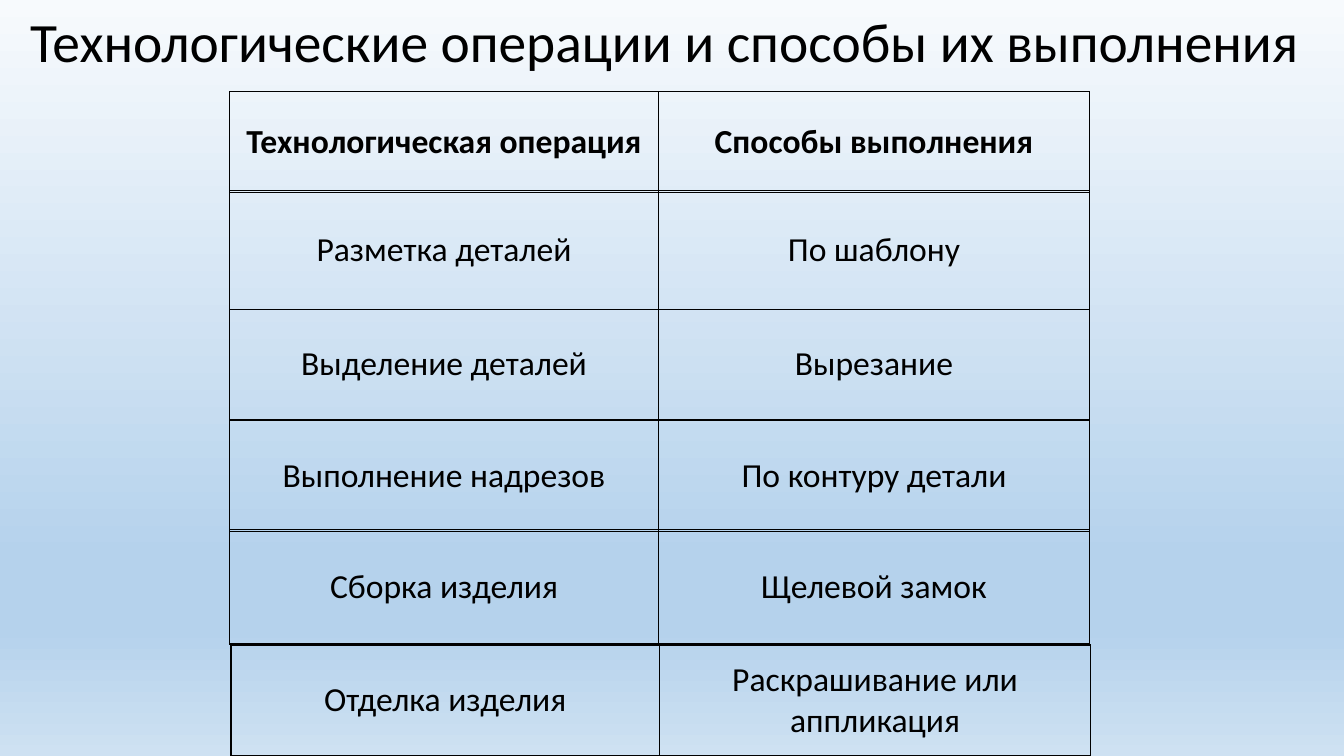
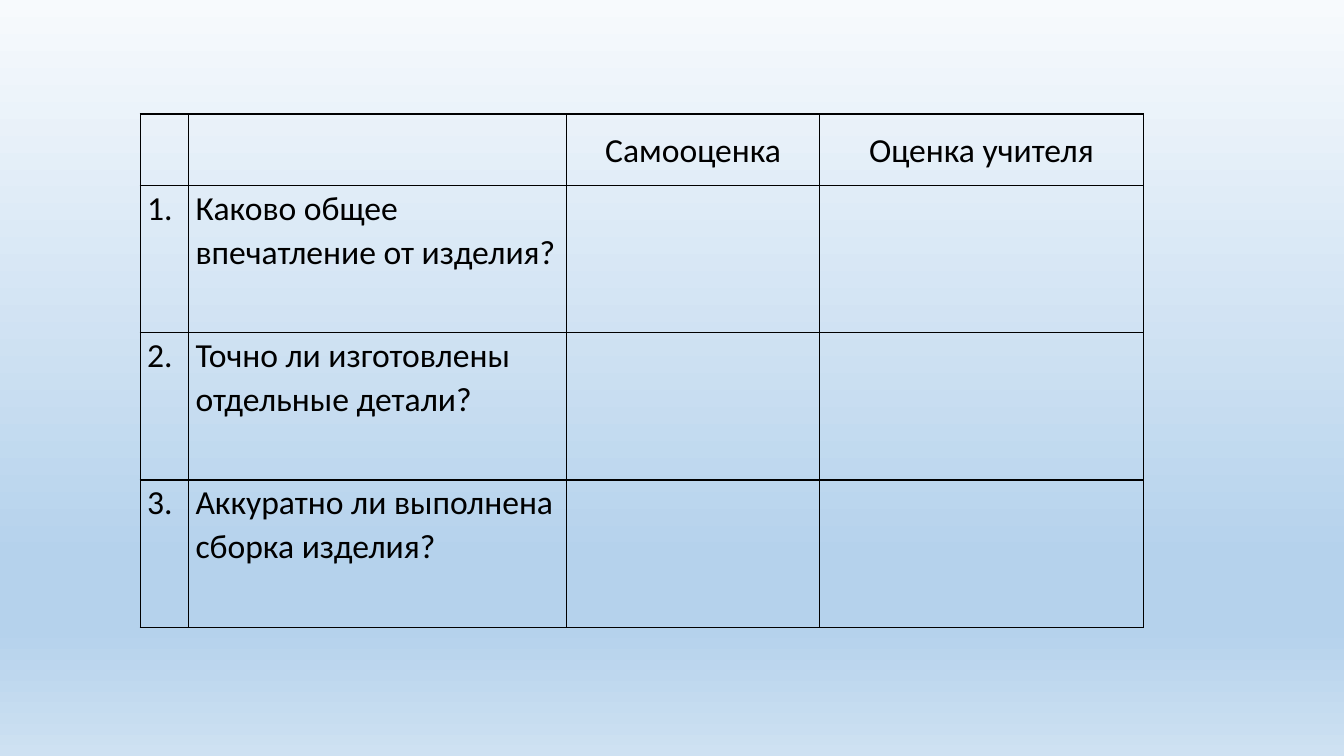
from copy import deepcopy
from dataclasses import dataclass

from lxml.etree import SubElement
from pptx import Presentation
from pptx.dml.color import RGBColor
from pptx.enum.text import MSO_ANCHOR, MSO_AUTO_SIZE, PP_ALIGN
from pptx.oxml.ns import qn
from pptx.util import Inches, Pt


@dataclass(frozen=True)
class Theme:
    font: str = "Calibri"
    ink: str = "000000"
    title_size: float = 39.6
    table_size: float = 24
    border_width: float = 1
    sky: tuple = ((0, "F7FAFD"), (0.74, "B5D2EC"), (0.83, "B5D2EC"), (1, "CEE1F2"))


class LessonDeck:
    TITLE_ONLY = 5
    BLANK = 6

    def __init__(self, theme):
        self.theme = theme
        self.deck = Presentation()
        self.deck.slide_width = Inches(13.33)
        self.deck.slide_height = Inches(7.5)
        self.page = None
        self.paint_master()

    def across(self, percent):
        return round(self.deck.slide_width * percent / 100)

    def down(self, percent):
        return round(self.deck.slide_height * percent / 100)

    def paint_master(self):
        master = self.deck.slide_master
        fill = master.background.fill
        fill.gradient()
        fill.gradient_angle = 270
        stop_list = master.element.find(".//" + qn("a:gsLst"))
        while len(stop_list) < len(self.theme.sky):
            stop_list.append(deepcopy(stop_list[0]))
        for stop, (position, color) in zip(fill.gradient_stops, self.theme.sky):
            stop.position = position
            stop.color.rgb = RGBColor.from_string(color)

    def add_page(self, layout):
        self.page = self.deck.slides.add_slide(self.deck.slide_layouts[layout])

    def style(self, para, size, align, spacing=None, bold=False):
        para.alignment = align
        para.line_spacing = spacing
        para.font.name = self.theme.font
        para.font.size = Pt(size)
        para.font.bold = bold
        para.font.color.rgb = RGBColor.from_string(self.theme.ink)

    def title(self, text, left, top, width, height):
        box = self.page.shapes.title
        box.left, box.top = self.across(left), self.down(top)
        box.width, box.height = self.across(width), self.down(height)
        frame = box.text_frame
        frame.text = text
        frame.word_wrap = True
        frame.auto_size = MSO_AUTO_SIZE.NONE
        frame.vertical_anchor = MSO_ANCHOR.MIDDLE
        self.style(frame.paragraphs[0], self.theme.title_size, PP_ALIGN.LEFT, 0.9)

    def outline(self, cell):
        properties = cell._tc.get_or_add_tcPr()
        for side in ("lnL", "lnR", "lnT", "lnB"):
            line = SubElement(properties, qn(f"a:{side}"), w=str(Pt(self.theme.border_width)))
            SubElement(SubElement(line, qn("a:solidFill")), qn("a:srgbClr"), val=self.theme.ink)
        cell.fill.background()

    def table(self, left, top, columns, rows, texts):
        frame = self.page.shapes.add_table(
            len(rows), len(columns), self.across(left), self.down(top),
            self.across(sum(columns)), self.down(sum(rows)))
        table = frame.table
        table.first_row = table.horz_banding = False
        for column, width in zip(table.columns, columns):
            column.width = self.across(width)
        for row, height, row_texts in zip(table.rows, rows, texts):
            row.height = self.down(height)
            for cell, text in zip(row.cells, row_texts):
                self.outline(cell)
                cell.text = text
        return table

    def format_cell(self, cell, centered=True, tight=False, bold=False):
        if tight:
            cell.margin_left = cell.margin_right = Inches(0.07)
            cell.margin_top = cell.margin_bottom = 0
        cell.vertical_anchor = MSO_ANCHOR.MIDDLE if centered else MSO_ANCHOR.TOP
        self.style(cell.text_frame.paragraphs[0], self.theme.table_size,
                   PP_ALIGN.CENTER if centered else PP_ALIGN.LEFT,
                   1.07 if tight else None, bold)


def build_operations(lesson):
    lesson.add_page(LessonDeck.TITLE_ONLY)
    lesson.title("Технологические операции и способы их выполнения", 1.5, 0, 97.5, 11.73)
    operations = (
        (17.1, 12.13, 13.33, "Технологическая операция", "Способы выполнения"),
        (17.1, 25.2, 15.73, "Разметка деталей", "По шаблону"),
        (17.1, 40.93, 14.53, "Выделение деталей", "Вырезание"),
        (17.1, 55.6, 14.67, "Выполнение надрезов", "По контуру детали"),
        (17.1, 70, 15.2, "Сборка изделия", "Щелевой замок"),
        (17.18, 85.33, 14.67, "Отделка изделия", "Раскрашивание или аппликация"),
    )
    for index, (left, top, height, *texts) in enumerate(operations):
        strip = lesson.table(left, top, (31.88, 32.11), (height,), (texts,))
        for cell in strip.iter_cells():
            lesson.format_cell(cell, bold=index == 0)


def build_assessment(lesson):
    lesson.add_page(LessonDeck.BLANK)
    questions = (
        "Каково общее впечатление от изделия?",
        "Точно ли изготовлены отдельные детали?",
        "Аккуратно ли выполнена сборка изделия?",
    )
    texts = [("", "", "Самооценка", "Оценка учителя")]
    texts += [(f"{number}.", question, "", "") for number, question in enumerate(questions, 1)]
    rows = (9.47,) + (19.47,) * len(questions)
    grid = lesson.table(10.43, 15.07, (3.6, 28.13, 18.83, 24.08), rows, texts)
    for index, row in enumerate(grid.rows):
        for cell in row.cells:
            lesson.format_cell(cell, centered=index == 0, tight=True)


def main():
    lesson = LessonDeck(Theme())
    build_operations(lesson)
    build_assessment(lesson)
    lesson.deck.save("out.pptx")


if __name__ == "__main__":
    main()
